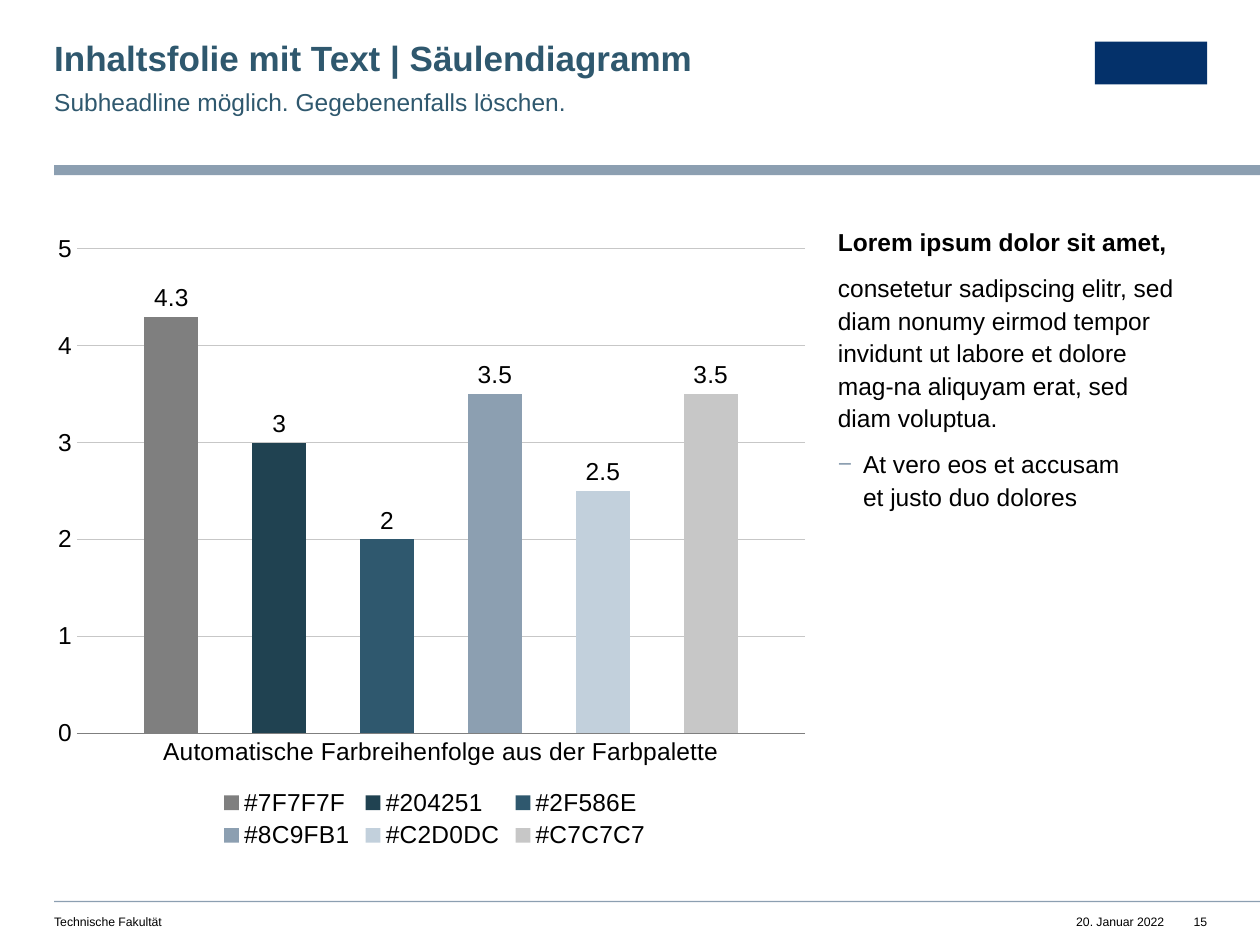
from lxml import etree
from pptx import Presentation
from pptx import util as u
from pptx.chart.data import CategoryChartData
from pptx.dml.color import RGBColor
from pptx.enum import chart as charts, shapes, text
from pptx.oxml import ns

FONT = "Arial"
BLACK = RGBColor(0, 0, 0)
PETROL = RGBColor(0x2F, 0x58, 0x6E)
STEEL = RGBColor(0x8C, 0x9F, 0xB1)
NAVY = RGBColor(0x04, 0x31, 0x6A)
GREY = RGBColor(0x7F, 0x7F, 0x7F)
SILVER = RGBColor(0xC7, 0xC7, 0xC7)

LEFT, RIGHT, CONTENT_TOP, CONTENT_HEIGHT = 0.43, 9.58, 1.78, 5

TITLE = "Inhaltsfolie mit Text | Säulendiagramm"
SUBTITLE = "Subheadline möglich. Gegebenenfalls löschen."
# text, bold, bulleted
BODY = [
    ("Lorem ipsum dolor sit amet,", True, False),
    ("consetetur sadipscing elitr, sed diam nonumy eirmod tempor invidunt ut "
     "labore et dolore mag-na aliquyam erat, sed diam voluptua.", False, False),
    ("At vero eos et accusam\net justo duo dolores", False, True),
]
# text, left, width, alignment
FOOTER = [
    ("Technische Fakultät", LEFT, 4.49, text.PP_ALIGN.LEFT),
    ("20. Januar 2022", 8.53, 0.71, text.PP_ALIGN.RIGHT),
    ("15", 9.38, 0.2, text.PP_ALIGN.RIGHT),
]
CATEGORY = "Automatische Farbreihenfolge aus der Farbpalette"
# Each series is named after its own colour
SERIES = [("7F7F7F", 4.3), ("204251", 3), ("2F586E", 2),
          ("8C9FB1", 3.5), ("C2D0DC", 2.5), ("C7C7C7", 3.5)]
PLOT_AREA = {"x": 0.03, "y": 0.039, "w": 0.957, "h": 0.769}


def set_font(font, size, color=BLACK, bold=False):
    font.name, font.size, font.bold = FONT, u.Pt(size), bold
    font.color.rgb = color


def add_bar(page, left, top, width, height, color):
    bar = page.shapes.add_shape(shapes.MSO_SHAPE.RECTANGLE,
                                *map(u.Inches, (left, top, width, height)))
    bar.shadow.inherit = False
    bar.fill.solid()
    bar.fill.fore_color.rgb = color
    bar.line.fill.background()


def add_frame(page, left, top, width, height, right_inset=0):
    box = page.shapes.add_textbox(*map(u.Inches, (left, top, width, height)))
    frame = box.text_frame
    frame.word_wrap = True
    frame.margin_left = frame.margin_top = frame.margin_bottom = 0
    frame.margin_right = u.Inches(right_inset)
    return frame


def write(para, words, size, color=BLACK, bold=False, spacing=None, after=0):
    para.text = words
    para.line_spacing = spacing
    para.space_after = u.Pt(after)
    set_font(para.font, size, color, bold)


def add_dash(para):
    """Give an empty paragraph a hanging steel-blue dash."""
    para.level = 1
    props = para._p.get_or_add_pPr()
    indent = u.Inches(0.2)
    props.set("marL", str(indent))
    props.set("indent", str(-indent))
    color = etree.SubElement(props, ns.qn("a:buClr"))
    etree.SubElement(color, ns.qn("a:srgbClr"), val=str(STEEL))
    etree.SubElement(props, ns.qn("a:buFont"), typeface=FONT)
    etree.SubElement(props, ns.qn("a:buChar"), char="−")


def fix_plot_area(chart):
    """Pin the inner plot area to its share of the chart."""
    plot_area = chart._chartSpace.chart.plotArea
    for old in plot_area.findall(ns.qn("c:layout")):
        plot_area.remove(old)
    layout = etree.Element(ns.qn("c:layout"))
    plot_area.insert(0, layout)
    manual = etree.SubElement(layout, ns.qn("c:manualLayout"))
    settings = {"layoutTarget": "inner", "xMode": "edge", "yMode": "edge", **PLOT_AREA}
    for name, value in settings.items():
        etree.SubElement(manual, ns.qn("c:" + name), val=str(value))


def add_column_chart(page):
    data = CategoryChartData()
    data.categories = [CATEGORY]
    for code, value in SERIES:
        data.add_series("#" + code, [value])
    area = map(u.Inches, (LEFT, CONTENT_TOP, 6.04, CONTENT_HEIGHT))
    chart = page.shapes.add_chart(charts.XL_CHART_TYPE.COLUMN_CLUSTERED, *area, data).chart
    set_font(chart.font, 14)
    chart.has_title = False
    chart.has_legend = True
    chart.legend.position = charts.XL_LEGEND_POSITION.BOTTOM
    chart.legend.include_in_layout = False
    set_font(chart.legend.font, 14)

    for axis in (chart.category_axis, chart.value_axis):
        axis.major_tick_mark = axis.minor_tick_mark = charts.XL_TICK_MARK.NONE
        set_font(axis.tick_labels.font, 14)
    base = chart.category_axis.format.line
    base.color.rgb, base.width = GREY, u.Pt(0.5)
    values = chart.value_axis
    values.minimum_scale, values.maximum_scale, values.major_unit = 0, 5, 1
    values.format.line.fill.background()
    grid = values.major_gridlines.format.line
    grid.color.rgb, grid.width = SILVER, u.Pt(0.5)

    plot = chart.plots[0]
    plot.gap_width, plot.overlap, plot.vary_by_categories = 250, -100, False
    for series, (code, _) in zip(plot.series, SERIES):
        series.format.fill.solid()
        series.format.fill.fore_color.rgb = RGBColor.from_string(code)
        labels = series.data_labels
        labels.show_value = True
        labels.position = charts.XL_LABEL_POSITION.OUTSIDE_END
        set_font(labels.font, 14)
    fix_plot_area(chart)


def main():
    deck = Presentation()
    deck.slide_width, deck.slide_height = u.Inches(10), u.Inches(7.5)
    page = deck.slides.add_slide(deck.slide_layouts[6])

    add_bar(page, LEFT, 1.31, 9.57, 0.08, STEEL)
    add_bar(page, LEFT, 7.15, 9.57, 0.01, STEEL)
    add_bar(page, 8.69, 0.33, 0.89, 0.34, NAVY)

    for words, left, width, alignment in FOOTER:
        para = add_frame(page, left, 7.26, width, 0.12).paragraphs[0]
        write(para, words, 7)
        para.alignment = alignment

    title = add_frame(page, LEFT, 0.33, 5.61, 0.3)
    write(title.paragraphs[0], TITLE, 20, PETROL, True, spacing=0.9)
    subtitle = add_frame(page, LEFT, 0.67, 5.61, 0.24, right_inset=0.39)
    write(subtitle.paragraphs[0], SUBTITLE, 14, PETROL, spacing=1.1, after=8)

    add_column_chart(page)

    body_left = 6.65
    body = add_frame(page, body_left, CONTENT_TOP, RIGHT - body_left, CONTENT_HEIGHT, 0.2)
    for number, (words, bold, bulleted) in enumerate(BODY):
        para = body.add_paragraph() if number else body.paragraphs[0]
        if bulleted:
            add_dash(para)
        write(para, words, 14, bold=bold, spacing=1.1, after=8)

    deck.save("out.pptx")


if __name__ == "__main__":
    main()
